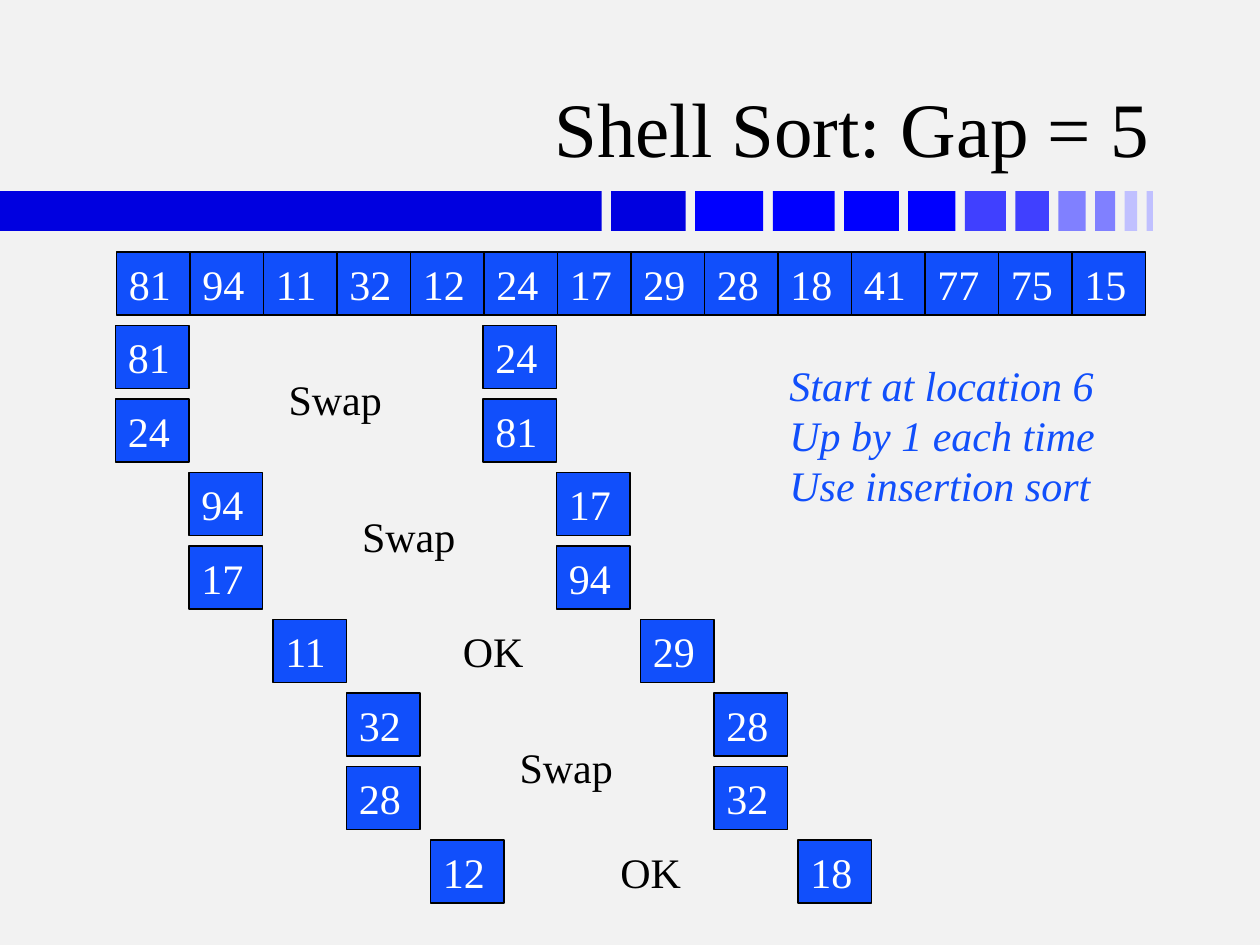
from pptx import Presentation
from pptx.dml.color import RGBColor
from pptx.enum.shapes import MSO_SHAPE
from pptx.enum.text import MSO_ANCHOR, MSO_AUTO_SIZE, PP_ALIGN
from pptx.util import Emu, Pt

PX = 914400 // 120
FONT = "Times New Roman"
BLUE, BLACK, WHITE = "114FFB", "000000", "FFFFFF"
CELL_WIDTH, CELL_HEIGHT, ROW_PITCH = 70, 60, 70
GAP = 5

VALUES = [81, 94, 11, 32, 12, 24, 17, 29, 28, 18, 41, 77, 75, 15]
# Value pairs before and after each comparison, verdict, verdict's offset from the top
STEPS = [
    ([(81, 24), (24, 81)], "Swap", 40),
    ([(94, 17), (17, 94)], "Swap", 30),
    ([(11, 29)], "OK", 0),
    ([(32, 28), (28, 32)], "Swap", 40),
    ([(12, 18)], "OK", 0),
]
VERDICT_WIDTHS = {"Swap": 113, "OK": 82}
RULES = ["Start at location 6", "Up by 1 each time", "Use insertion sort"]
BAR_SEGMENTS = [
    (573, "0000E0"), (71, "0000E0"), (65, "0000FF"), (59, "0000FF"),
    (52, "0000FF"), (45, "0000FF"), (39, "4040FF"), (32, "4040FF"),
    (26, "8080FF"), (19, "8080FF"), (12, "C0C0FF"), (6, "C0C0FF"),
]


def px(*lengths):
    return [Emu(length * PX) for length in lengths]


def paint(fill, color):
    fill.solid()
    fill.fore_color.rgb = RGBColor.from_string(color)


def write(frame, lines, size, color, italic=False, align=PP_ALIGN.LEFT):
    for index, line in enumerate(lines):
        paragraph = frame.paragraphs[0] if index == 0 else frame.add_paragraph()
        paragraph.alignment = align
        run = paragraph.add_run()
        run.text = line
        run.font.name = FONT
        run.font.size = Pt(size)
        run.font.italic = italic
        run.font.color.rgb = RGBColor.from_string(color)


def add_rectangle(slide, left, top, width, height, color):
    rectangle = slide.shapes.add_shape(
        MSO_SHAPE.RECTANGLE, *px(left, top, width, height))
    rectangle.shadow.inherit = False
    paint(rectangle.fill, color)
    rectangle.line.fill.background()
    return rectangle


def add_cell(slide, left, top, value):
    cell = add_rectangle(slide, left, top, CELL_WIDTH, CELL_HEIGHT, BLUE)
    paint(cell.line.fill, BLACK)
    cell.line.width = Pt(1)
    frame = cell.text_frame
    frame.word_wrap = False
    frame.vertical_anchor = MSO_ANCHOR.MIDDLE
    write(frame, [str(value)], 24, WHITE)


def add_caption(slide, left, top, width, height, lines, color, italic=False):
    frame = slide.shapes.add_textbox(*px(left, top, width, height)).text_frame
    frame.word_wrap = False
    frame.auto_size = MSO_AUTO_SIZE.SHAPE_TO_FIT_TEXT
    write(frame, lines, 24, color, italic)


def add_title(slide, left, top, width, height):
    frame = slide.shapes.add_textbox(*px(left, top, width, height)).text_frame
    frame.word_wrap = True
    frame.vertical_anchor = MSO_ANCHOR.BOTTOM
    write(frame, ["Shell Sort: Gap = 5"], 44, BLACK, align=PP_ALIGN.RIGHT)


def add_fading_bar(slide, left, top, height, spacing=9):
    for width, color in BAR_SEGMENTS:
        add_rectangle(slide, left, top, width, height, color)
        left += width + spacing


def add_array(slide, left, top):
    for index, value in enumerate(VALUES):
        add_cell(slide, left + index * CELL_WIDTH, top, value)


def add_step(slide, left, top, pairs, verdict, verdict_offset):
    """Draw one comparison: cells GAP columns apart with the verdict between."""
    distance = GAP * CELL_WIDTH
    for row, (first, second) in enumerate(pairs):
        row_top = top + row * ROW_PITCH
        add_cell(slide, left, row_top, first)
        add_cell(slide, left + distance, row_top, second)
    width = VERDICT_WIDTHS[verdict]
    verdict_left = left + (distance + CELL_WIDTH - width) // 2
    add_caption(slide, verdict_left, top + verdict_offset, width, CELL_HEIGHT,
                [verdict], BLACK)


def add_steps(slide, left, top):
    for index, (pairs, verdict, verdict_offset) in enumerate(STEPS):
        # Every second step moves a little further to the right
        step_left = left + index * CELL_WIDTH + index // 2 * 10
        add_step(slide, step_left, top, pairs, verdict, verdict_offset)
        top += len(pairs) * ROW_PITCH


def main():
    presentation = Presentation()
    presentation.slide_width, presentation.slide_height = px(1200, 900)
    slide = presentation.slides.add_slide(presentation.slide_layouts[6])
    paint(slide.background.fill, "F2F2F2")
    add_fading_bar(slide, 0, 182, 38)
    add_title(slide, 89, 23, 1018, 148)
    add_array(slide, 111, 240)
    add_steps(slide, 110, 310)
    add_caption(slide, 740, 336, 318, 157, RULES, BLUE, italic=True)
    presentation.save("out.pptx")


if __name__ == "__main__":
    main()
